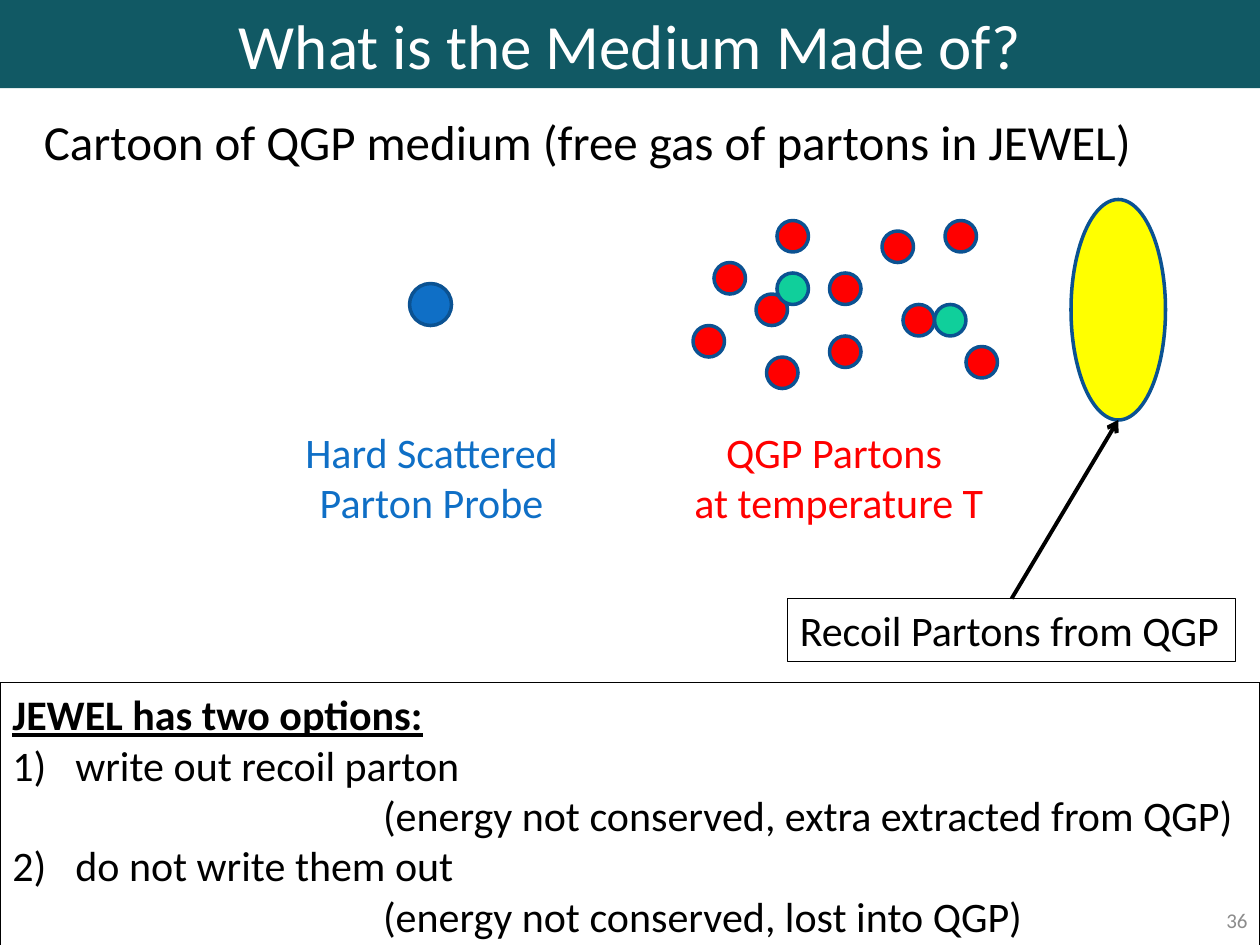
import pptx
import pptx.dml.color
import pptx.enum.shapes
import pptx.enum.text
import pptx.oxml.ns
import pptx.util
from lxml import etree

PX = 7620
FONT = "Calibri"
RGB = pptx.dml.color.RGBColor
TEAL = RGB(0x11, 0x59, 0x64)
WHITE = RGB(0xFF, 0xFF, 0xFF)
BLACK = RGB(0, 0, 0)
GREY = RGB(0x8C, 0x8C, 0x8C)
RED = RGB(0xFF, 0, 0)
YELLOW = RGB(0xFF, 0xFF, 0)
GREEN = RGB(0x10, 0xCF, 0x9B)
BLUE = RGB(0x0F, 0x6F, 0xC6)
OUTLINE = RGB(0x0B, 0x52, 0x92)

SHAPE = pptx.enum.shapes.MSO_SHAPE
ALIGN = pptx.enum.text.PP_ALIGN
ANCHOR = pptx.enum.text.MSO_ANCHOR
AUTO = pptx.enum.text.MSO_AUTO_SIZE

PARTON = 30
QGP_PARTONS = [(680, 250), (720, 280), (740, 210), (790, 260), (790, 320),
               (860, 290), (840, 220), (900, 210), (920, 330), (730, 340),
               (660, 310)]
STRUCK_PARTONS = [(740, 260), (890, 290)]
OPTIONS = [("write out recoil parton",
            "(energy not conserved, extra extracted from QGP)"),
           ("do not write them out",
            "(energy not conserved, lost into QGP)")]
NUMBER_INDENT = 60
REMARK_INDENT = 353


def emu(*lengths):
    return [n * PX for n in lengths]


def apply(target, values):
    for name, value in values.items():
        setattr(target, name, value)


def add_paragraph(tf, text, size, color, align=ALIGN.LEFT, first=False,
                  indent=0, number=None, **font):
    p = tf.paragraphs[0] if first else tf.add_paragraph()
    p.alignment = align
    pPr = p._p.get_or_add_pPr()
    if indent:
        pPr.set("marL", str(indent * PX))
        pPr.set("indent", str(-indent * PX if number else 0))
    if number:
        etree.SubElement(pPr, pptx.oxml.ns.qn("a:buFont"), typeface="+mj-lt")
        etree.SubElement(pPr, pptx.oxml.ns.qn("a:buAutoNum"),
                         type="arabicParenR", startAt=str(number))
    r = p.add_run()
    r.text = text
    apply(r.font, {"name": FONT, "size": pptx.util.Pt(size), **font})
    r.font.color.rgb = color


def add_text(s, box, lines, size, color, align=ALIGN.LEFT, border=False,
             **frame):
    sp = s.shapes.add_textbox(*emu(*box))
    apply(sp.text_frame, {"word_wrap": False,
                          "auto_size": AUTO.SHAPE_TO_FIT_TEXT, **frame})
    for i, line in enumerate(lines):
        add_paragraph(sp.text_frame, line, size, color, align, first=i == 0)
    if border:
        sp.line.color.rgb = BLACK
        sp.line.width = pptx.util.Pt(0.75)
    return sp


def add_ellipse(s, box, color):
    sp = s.shapes.add_shape(SHAPE.OVAL, *emu(*box))
    sp.shadow.inherit = False
    sp.fill.solid()
    sp.fill.fore_color.rgb = color
    sp.line.color.rgb = OUTLINE
    sp.line.width = pptx.util.Pt(2)


def add_arrow(s, source, end):
    line = s.shapes.add_connector(
        pptx.enum.shapes.MSO_CONNECTOR.STRAIGHT, 0, 0, *emu(*end))
    line.begin_connect(source, 0)
    line.line.color.rgb = BLACK
    line.line.width = pptx.util.Pt(2.25)
    etree.SubElement(line.line._get_or_add_ln(),
                     pptx.oxml.ns.qn("a:tailEnd"), type="arrow")
    etree.SubElement(line._element.spPr, pptx.oxml.ns.qn("a:effectLst"))


def set_title(s, text):
    sp = s.shapes.title
    apply(sp, dict(zip(("left", "top", "width", "height"),
                       emu(0, 0, 1200, 84))))
    sp.fill.solid()
    sp.fill.fore_color.rgb = TEAL
    apply(sp.text_frame, {"vertical_anchor": ANCHOR.MIDDLE,
                          "auto_size": AUTO.NONE})
    add_paragraph(sp.text_frame, text, 36, WHITE, ALIGN.CENTER, first=True)


def add_options(s):
    sp = add_text(s, (0, 650, 1200, 254), [], 24, BLACK, border=True,
                  word_wrap=True)
    tf = sp.text_frame
    add_paragraph(tf, "JEWEL has two options:", 24, BLACK, first=True,
                  bold=True, underline=True)
    for number, (option, remark) in enumerate(OPTIONS, 1):
        add_paragraph(tf, option, 24, BLACK, indent=NUMBER_INDENT,
                      number=number)
        add_paragraph(tf, remark, 24, BLACK, indent=REMARK_INDENT)


def main():
    prs = pptx.Presentation()
    prs.slide_width, prs.slide_height = emu(1200, 900)
    s = prs.slides.add_slide(prs.slide_layouts[5])
    set_title(s, "What is the Medium Made of?")
    add_text(s, (920, 852, 280, 48), ["36"], 12, GREY, ALIGN.RIGHT,
             word_wrap=True, auto_size=AUTO.NONE,
             vertical_anchor=ANCHOR.MIDDLE)
    add_text(s, (30, 100, 1070, 68),
             ["Cartoon of QGP medium (free gas of partons in JEWEL)"],
             28, BLACK)

    add_ellipse(s, (1020, 190, 90, 210), YELLOW)
    add_ellipse(s, (390, 270, 40, 40), BLUE)
    for partons, color in ((QGP_PARTONS, RED), (STRUCK_PARTONS, GREEN)):
        for x, y in partons:
            add_ellipse(s, (x, y, PARTON, PARTON), color)

    add_text(s, (648, 400, 302, 109), ["QGP Partons ", "at temperature T"],
             24, RED, ALIGN.CENTER)
    add_text(s, (277, 400, 268, 109), ["Hard Scattered", "Parton Probe"],
             24, BLUE, ALIGN.CENTER)
    recoil = add_text(s, (750, 570, 427, 60), ["Recoil Partons from QGP"],
                      24, BLACK, border=True)
    add_arrow(s, recoil, (1065, 400))
    add_options(s)
    prs.save("out.pptx")


if __name__ == "__main__":
    main()
